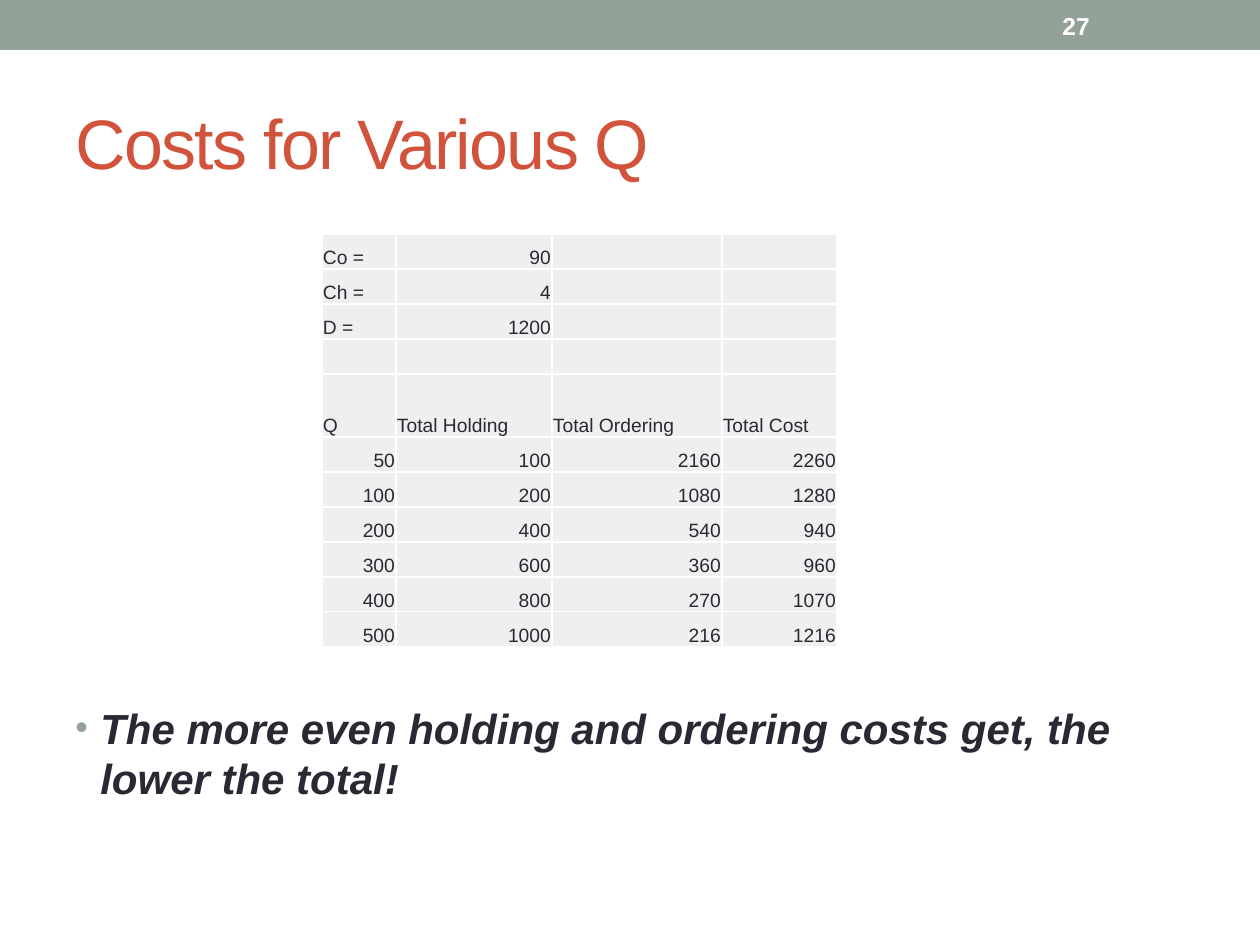
import pptx
import pptx.util
import pptx.dml.color
import pptx.enum.shapes
import pptx.enum.text
import pptx.oxml.ns
from lxml import etree

RGB = pptx.dml.color.RGBColor
ALIGN = pptx.enum.text.PP_ALIGN
ANCHOR = pptx.enum.text.MSO_ANCHOR
qn = pptx.oxml.ns.qn

SAGE = RGB(0x93, 0xA2, 0x99)
RUST = RGB(0xD2, 0x53, 0x3C)
INK = RGB(0x29, 0x29, 0x34)
PALE = RGB(0xEE, 0xF0, 0xEF)
WHITE = RGB(0xFF, 0xFF, 0xFF)

FONT = "Arial"
CELL_SIZE = 11
COLUMNS = [74, 156, 170, 115]
ROW, HEADER_ROW = 35, 63
INPUTS = [("Co =", 90), ("Ch =", 4), ("D =", 1200)]
HEADERS = ["Q", "Total Holding", "Total Ordering", "Total Cost"]
COSTS = [
    (50, 100, 2160, 2260),
    (100, 200, 1080, 1280),
    (200, 400, 540, 940),
    (300, 600, 360, 960),
    (400, 800, 270, 1070),
    (500, 1000, 216, 1216),
]


def px(n):
    return pptx.util.Emu(round(n * 914400 / 126))


def box(*lengths):
    return [px(n) for n in lengths]


def write(p, text, size, color, align=ALIGN.LEFT, **style):
    p.alignment = align
    r = p.add_run()
    r.text = text
    font = {"name": FONT, "size": pptx.util.Pt(size), **style}
    for name, value in font.items():
        setattr(r.font, name, value)
    r.font.color.rgb = color
    return r


def add_banner(s):
    sp = s.shapes.add_shape(pptx.enum.shapes.MSO_SHAPE.RECTANGLE, *box(0, 0, 1260, 50))
    sp.shadow.inherit = False
    sp.fill.solid()
    sp.fill.fore_color.rgb = SAGE
    sp.line.fill.background()


def set_title(s, text):
    sp = s.shapes.title
    sp.left, sp.top, sp.width, sp.height = box(63, 73, 1134, 136)
    tf = sp.text_frame
    tf.auto_size = pptx.enum.text.MSO_AUTO_SIZE.NONE
    tf.vertical_anchor = ANCHOR.MIDDLE
    r = write(tf.paragraphs[0], text, 40, RUST)
    r.font._element.set("spc", "-100")


def add_text(s, place, text, size, color, anchor=ANCHOR.TOP, **style):
    tf = s.shapes.add_textbox(*box(*place)).text_frame
    tf.word_wrap = True
    tf.vertical_anchor = anchor
    write(tf.paragraphs[0], text, size, color, **style)
    return tf.paragraphs[0]


def add_bullet(p):
    pPr = p._p.get_or_add_pPr()
    pPr.set("marL", str(px(25)))
    pPr.set("indent", str(-px(25)))
    color = etree.SubElement(pPr, qn("a:buClr"))
    etree.SubElement(color, qn("a:srgbClr"), val=str(SAGE))
    etree.SubElement(pPr, qn("a:buSzPct"), val="85000")
    etree.SubElement(pPr, qn("a:buFont"), typeface=FONT)
    etree.SubElement(pPr, qn("a:buChar"), char="•")


def add_borders(cell):
    tcPr = cell._tc.get_or_add_tcPr()
    for side in ("a:lnL", "a:lnR", "a:lnT", "a:lnB"):
        ln = etree.SubElement(tcPr, qn(side), w=str(pptx.util.Pt(1)))
        fill = etree.SubElement(ln, qn("a:solidFill"))
        etree.SubElement(fill, qn("a:srgbClr"), val=str(WHITE))


def fill_cell(cell, value):
    layout = {
        "margin_left": px(1), "margin_right": px(1), "margin_top": px(1),
        "margin_bottom": 0, "vertical_anchor": ANCHOR.BOTTOM,
    }
    for name, setting in layout.items():
        setattr(cell, name, setting)
    add_borders(cell)
    cell.fill.solid()
    cell.fill.fore_color.rgb = PALE
    p = cell.text_frame.paragraphs[0]
    if value is None:
        # An empty cell keeps the small text size so its row stays low
        etree.SubElement(p._p, qn("a:endParaRPr"), sz=str(CELL_SIZE * 100))
    else:
        align = ALIGN.RIGHT if isinstance(value, int) else ALIGN.LEFT
        write(p, str(value), CELL_SIZE, INK, align)


def add_cost_table(s):
    rows = [(*pair, None, None) for pair in INPUTS] + [[None] * 4, HEADERS] + COSTS
    heights = [HEADER_ROW if row is HEADERS else ROW for row in rows]
    place = box(322, 234, sum(COLUMNS), sum(heights))
    table = s.shapes.add_table(len(rows), len(COLUMNS), *place).table
    table.first_row = table.horz_banding = False
    for column, width in zip(table.columns, COLUMNS):
        column.width = px(width)
    for i, (row, height) in enumerate(zip(rows, heights)):
        table.rows[i].height = px(height)
        for j, value in enumerate(row):
            fill_cell(table.cell(i, j), value)


def main():
    prs = pptx.Presentation()
    prs.slide_width, prs.slide_height = box(1260, 945)
    s = prs.slides.add_slide(prs.slide_layouts[5])

    # Banner and title
    add_banner(s)
    set_title(s, "Costs for Various Q")

    # Cost table and its conclusion
    add_cost_table(s)
    p = add_text(s, (63, 696, 1162, 196),
                 "The more even holding and ordering costs get, the lower the total!",
                 24, INK, bold=True, italic=True)
    add_bullet(p)

    # Slide number
    add_text(s, (1050, 3, 147, 45), "27", 14, WHITE, ANCHOR.MIDDLE, bold=True)

    prs.save("out.pptx")


if __name__ == "__main__":
    main()
